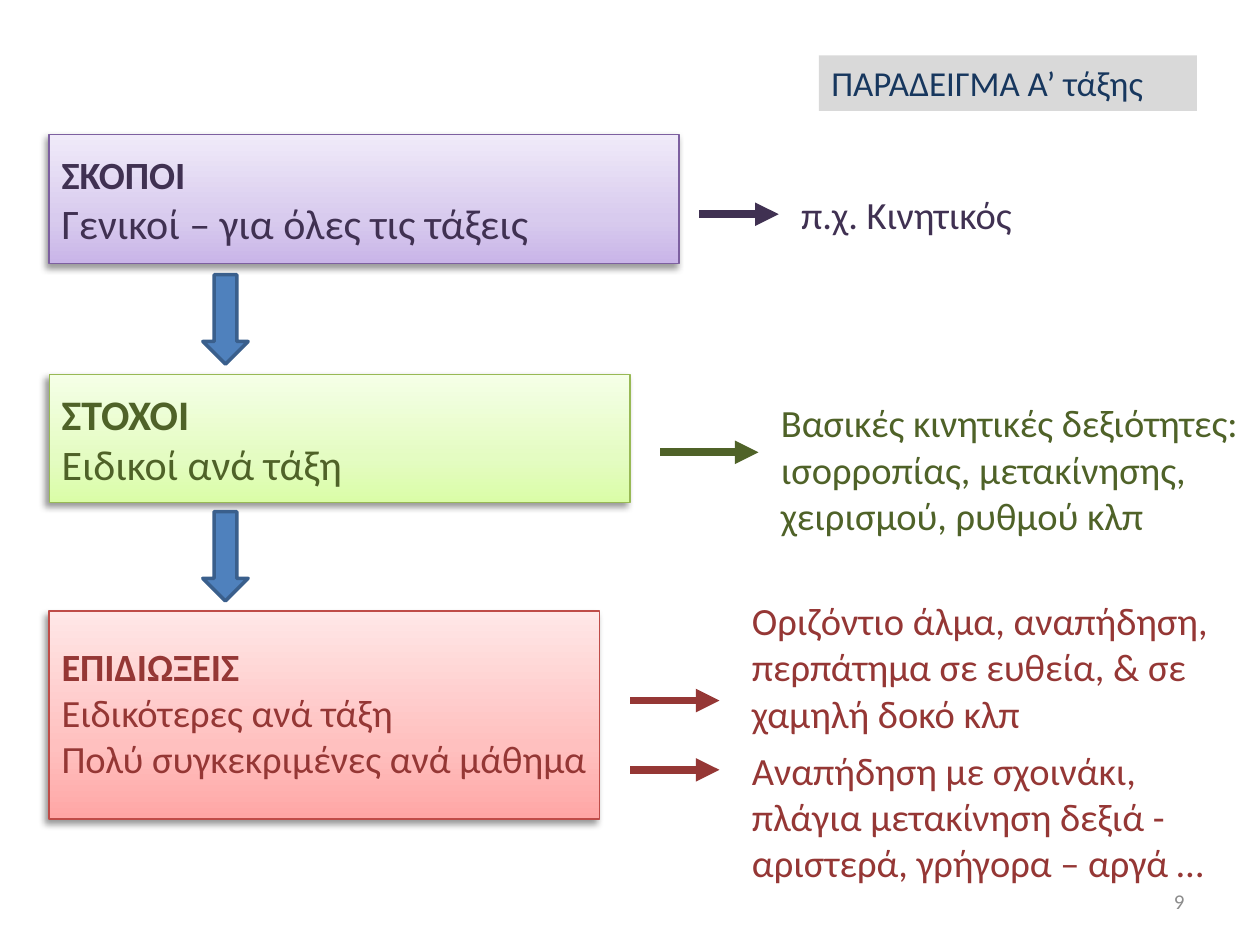
from copy import deepcopy
from dataclasses import dataclass

from lxml import etree
from pptx import Presentation
from pptx.dml.color import RGBColor
from pptx.enum.shapes import MSO_CONNECTOR, MSO_SHAPE
from pptx.enum.text import MSO_ANCHOR, MSO_AUTO_SIZE, PP_ALIGN
from pptx.oxml.ns import qn
from pptx.util import Inches, Pt

RECT, DOWN = MSO_SHAPE.RECTANGLE, MSO_SHAPE.DOWN_ARROW
STRAIGHT = MSO_CONNECTOR.STRAIGHT
TOP, MIDDLE = MSO_ANCHOR.TOP, MSO_ANCHOR.MIDDLE
LEFT, RIGHT = PP_ALIGN.LEFT, PP_ALIGN.RIGHT
GROW, FIXED = MSO_AUTO_SIZE.SHAPE_TO_FIT_TEXT, MSO_AUTO_SIZE.NONE


@dataclass(frozen=True)
class Tone:
    ink: str
    edge: str
    stops: tuple  # bottom to top


@dataclass(frozen=True)
class Theme:
    font: str = "Calibri"
    large: int = 24
    body: int = 22
    label: int = 20
    small: int = 12
    grey: str = "8C8C8C"
    panel: str = "D9D9D9"
    navy: str = "17375E"
    blue: str = "4F81BD"
    steel: str = "3A5F8C"
    purple: Tone = Tone("403152", "7D60A0", ("C9B5E8", "D8CBEE", "F0EAF9"))
    green: Tone = Tone("4F6228", "98B955", ("DAFDA7", "E4FCC2", "F5FFE7"))
    red: Tone = Tone("953735", "BF4C48", ("FFA6A5", "FFC0BF", "FFE7E7"))


def rgb(code):
    return RGBColor.from_string(code)


def write(shape, text, *, font, color, sizes, bold=False, align=LEFT,
          anchor=TOP, wrap=True, fit=GROW):
    """Fill a shape with text, one paragraph a line; bold marks the first."""
    frame = shape.text_frame
    frame.word_wrap, frame.auto_size = wrap, fit
    frame.vertical_anchor = anchor
    for i, line in enumerate(text.split("\n")):
        para = frame.paragraphs[0] if i == 0 else frame.add_paragraph()
        para.alignment = align
        run = para.add_run()
        run.text = line
        run.font.name = font
        run.font.size = Pt(sizes[min(i, len(sizes) - 1)])
        run.font.bold = bold and i == 0
        run.font.color.rgb = rgb(color)


class Board:
    def __init__(self, slide, theme):
        self.slide, self.theme = slide, theme

    def shape(self, kind, at, fill=None, edge=None, width=0.75):
        shape = self.slide.shapes.add_shape(kind, *map(Inches, at))
        shape.shadow.inherit = False
        if fill:
            shape.fill.solid()
            shape.fill.fore_color.rgb = rgb(fill)
        if edge:
            shape.line.color.rgb = rgb(edge)
            shape.line.width = Pt(width)
        else:
            shape.line.fill.background()
        return shape

    def fade(self, shape, stops):
        fill = shape.fill
        fill.gradient()
        fill.gradient_angle = 90
        first = shape._element.spPr.find(".//" + qn("a:gs"))
        first.addnext(deepcopy(first))
        for stop, place, code in zip(fill.gradient_stops, (0, 0.35, 1), stops):
            stop.position = place
            stop.color.rgb = rgb(code)

    def shade(self, shape):
        effects = shape._element.spPr.find(qn("a:effectLst"))
        outer = etree.SubElement(
            effects, qn("a:outerShdw"), blurRad=str(Pt(4)), dist=str(Pt(3)),
            dir=str(135 * 60000), algn="tr", rotWithShape="0")
        black = etree.SubElement(outer, qn("a:srgbClr"), val="000000")
        etree.SubElement(black, qn("a:alpha"), val="40000")

    def card(self, at, text, tone, sizes):
        card = self.shape(RECT, at, edge=tone.edge)
        self.fade(card, tone.stops)
        self.shade(card)
        write(card, text, font=self.theme.font, color=tone.ink, sizes=sizes,
              bold=True, anchor=MIDDLE, wrap=False, fit=FIXED)
        return card

    def note(self, at, text, color, size=None, **style):
        box = self.slide.shapes.add_textbox(*map(Inches, at))
        write(box, text, font=self.theme.font, color=color,
              sizes=[size or self.theme.body], **style)

    def label(self, at, text):
        box = self.shape(RECT, at, fill=self.theme.panel)
        write(box, text, font=self.theme.font, color=self.theme.navy,
              sizes=[self.theme.label])

    def step(self, top):
        self.shape(DOWN, (1.61, top, 0.36, 0.71), self.theme.blue,
                   self.theme.steel, 2)

    def arrow(self, start, end, y, color):
        line = self.slide.shapes.add_connector(
            STRAIGHT, Inches(start), Inches(y), Inches(end), Inches(y))
        line.line.color.rgb = rgb(color)
        line.line.width = Pt(4.5)
        etree.SubElement(line.line._get_or_add_ln(), qn("a:tailEnd"),
                         type="triangle")
        etree.SubElement(line._element.spPr, qn("a:effectLst"))


def main():
    deck = Presentation()
    deck.slide_width, deck.slide_height = Inches(10), Inches(7.5)
    theme = Theme()
    board = Board(deck.slides.add_slide(deck.slide_layouts[6]), theme)
    purple, green, red = theme.purple, theme.green, theme.red

    # Page number and heading
    board.note((7.17, 6.95, 2.33, 0.4), "9", theme.grey, theme.small,
               align=RIGHT, anchor=MIDDLE, fit=FIXED)
    board.label((6.5, 0.44, 3, 0.44), "ΠΑΡΑΔΕΙΓΜΑ Α’ τάξης")

    # Three levels, joined by block arrows
    board.card((0.39, 1.07, 5, 1.02), "ΣΚΟΠΟΙ\nΓενικοί – για όλες τις τάξεις",
               purple, [theme.body, theme.large])
    board.card((0.39, 2.97, 4.61, 1.02), "ΣΤΟΧΟΙ\nΕιδικοί ανά τάξη",
               green, [theme.large])
    aims = board.card(
        (0.39, 4.85, 4.37, 1.65),
        "ΕΠΙΔΙΩΞΕΙΣ\nΕιδικότερες ανά τάξη\nΠολύ συγκεκριμένες ανά μάθημα",
        red, [theme.body])
    aims.text_frame.margin_top = 0
    for top in (2.18, 4.06):
        board.step(top)

    # Examples: arrow start, end, height; text place, words, colour
    cases = [
        (5.55, 6.18, 1.7, (6.26, 1.47, 2.45, 0.47), "π.χ. Κινητικός", purple),
        (5.24, 6.02, 3.59, (6.1, 3.12, 3.9, 1.21),
         "Βασικές κινητικές δεξιότητες:\n"
         "ισορροπίας, μετακίνησης, χειρισμού, ρυθμού κλπ", green),
        (5, 5.71, 5.56, (5.87, 4.69, 3.94, 1.21),
         "Οριζόντιο άλμα, αναπήδηση, περπάτημα σε ευθεία, "
         "& σε χαμηλή δοκό κλπ", red),
        (5, 5.71, 6.11, (5.87, 5.88, 3.94, 1.21),
         "Αναπήδηση με σχοινάκι, πλάγια μετακίνηση δεξιά - "
         "αριστερά, γρήγορα – αργά …", red),
    ]
    for start, end, y, at, text, tone in cases:
        board.arrow(start, end, y, tone.ink)
        board.note(at, text, tone.ink)

    deck.save("out.pptx")


if __name__ == "__main__":
    main()
